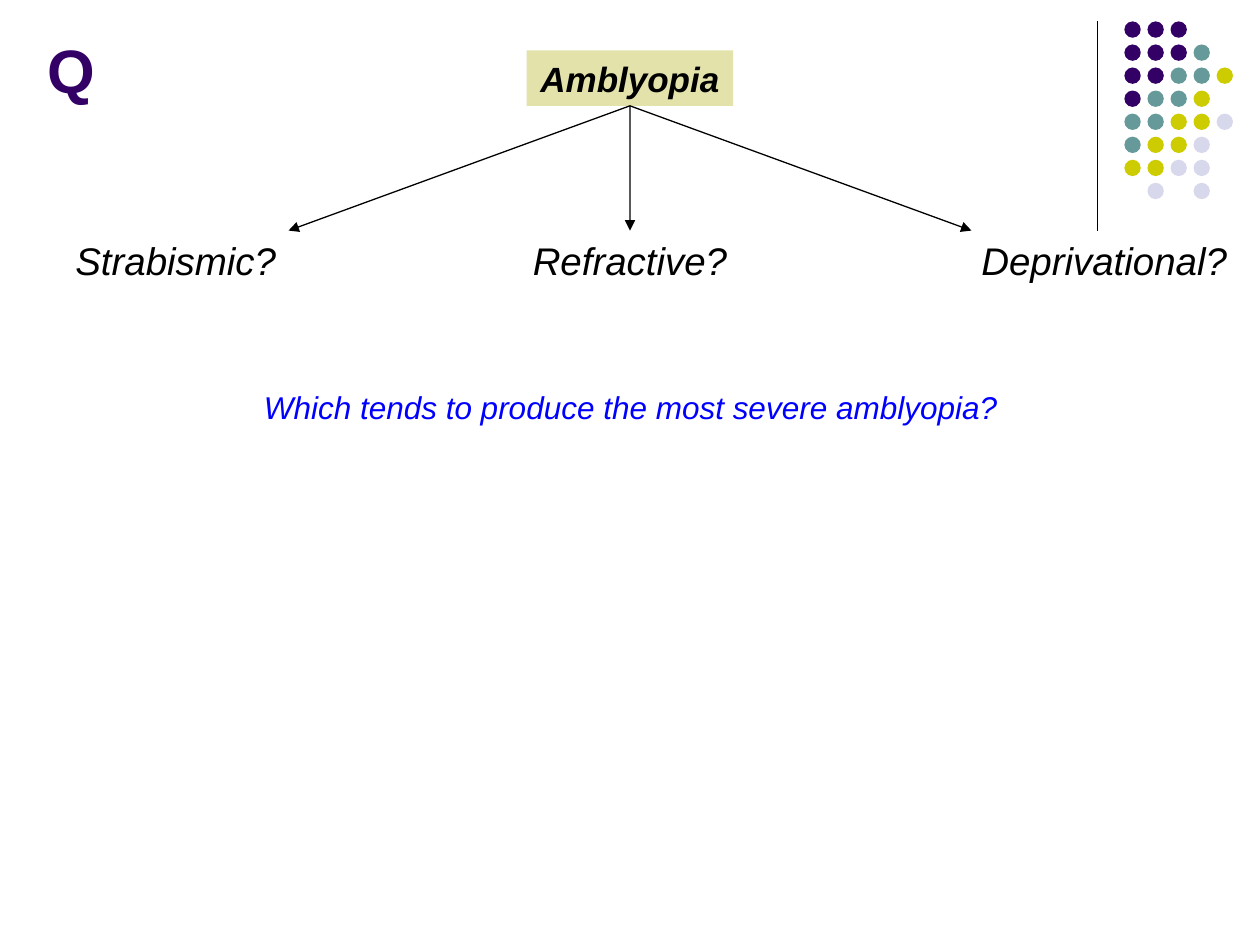
from dataclasses import dataclass

from lxml.etree import SubElement
from pptx import Presentation
from pptx.dml.color import RGBColor
from pptx.enum.shapes import MSO_CONNECTOR, MSO_SHAPE
from pptx.enum.text import MSO_ANCHOR, PP_ALIGN
from pptx.oxml.ns import qn
from pptx.util import Inches, Pt


@dataclass(frozen=True)
class Theme:
    font: str = "Arial"
    ink: str = "000000"
    purple: str = "330066"
    teal: str = "669999"
    lime: str = "CCCC00"
    lavender: str = "D8D8EC"
    topic_fill: str = "E2E2AA"
    question: str = "0000FF"
    title_size: int = 35
    topic_size: int = 20
    branch_size: int = 22
    question_size: int = 18
    line_width: float = 0.75


THEME = Theme()
DOT_COLORS = {"P": THEME.purple, "T": THEME.teal, "L": THEME.lime, "V": THEME.lavender}
DOT_ROWS = ["PPP", "PPPT", "PPTTL", "PTTL", "TTLLV", "TLLV", "LLVV", " V V"]


def place(shape, box):
    shape.left, shape.top, shape.width, shape.height = (Inches(length) for length in box)


def fill_shape(shape, color):
    shape.shadow.inherit = False
    shape.fill.solid()
    shape.fill.fore_color.rgb = RGBColor.from_string(color)
    shape.line.fill.background()


def write(shape, text, size, color, alignment, bold=False, italic=False, wrap=False):
    frame = shape.text_frame
    frame.word_wrap = wrap
    frame.text = text
    paragraph = frame.paragraphs[0]
    paragraph.alignment = alignment
    font = paragraph.font
    font.name = THEME.font
    font.size = Pt(size)
    font.bold = bold
    font.italic = italic
    font.color.rgb = RGBColor.from_string(color)


def add_label(slide, box, text, size, color, alignment, wrap=False):
    label = slide.shapes.add_textbox(*(Inches(length) for length in box))
    write(label, text, size, color, alignment, italic=True, wrap=wrap)
    return label


def add_line(slide, start, end, arrow=False):
    points = [Inches(length) for length in (*start, *end)]
    line = slide.shapes.add_connector(MSO_CONNECTOR.STRAIGHT, *points)
    line.line.width = Pt(THEME.line_width)
    line.line.color.rgb = RGBColor.from_string(THEME.ink)
    if arrow:
        SubElement(line.line._get_or_add_ln(), qn("a:tailEnd"), type="triangle")
    SubElement(line._element.spPr, qn("a:effectLst"))
    return line


def add_ornament(slide, box):
    left, top, width, height = box
    add_line(slide, (left, top), (left, top + height))
    first_column = left + 0.2 * width
    pitch = 0.183
    diameter = 0.13
    for row, pattern in enumerate(DOT_ROWS):
        for column, key in enumerate(pattern):
            if key in DOT_COLORS:
                dot = slide.shapes.add_shape(MSO_SHAPE.OVAL, 0, 0, 0, 0)
                place(dot, (first_column + column * pitch, top + row * pitch, diameter, diameter))
                fill_shape(dot, DOT_COLORS[key])


def add_title(slide, box):
    title = slide.shapes.title
    place(title, box)
    write(title, "Q", THEME.title_size, THEME.purple, PP_ALIGN.LEFT, bold=True, wrap=True)
    title.text_frame.vertical_anchor = MSO_ANCHOR.BOTTOM


def add_tree(slide, box):
    left, top, width, height = box
    center = left + width / 2
    topic_width, topic_height = 1.64, 0.44
    branch_height = 0.47
    branch_top = top + height - branch_height
    reach = 2.71

    topic = slide.shapes.add_shape(MSO_SHAPE.RECTANGLE, 0, 0, 0, 0)
    place(topic, (center - topic_width / 2, top, topic_width, topic_height))
    fill_shape(topic, THEME.topic_fill)
    write(topic, "Amblyopia", THEME.topic_size, THEME.ink, PP_ALIGN.CENTER, bold=True, italic=True)

    branches = [
        ("Strabismic?", left, 1.81, PP_ALIGN.RIGHT, -reach),
        ("Refractive?", center - 0.88, 1.76, PP_ALIGN.CENTER, 0),
        ("Deprivational?", center + reach - 0.02, 2.18, PP_ALIGN.LEFT, reach),
    ]
    for text, label_left, label_width, alignment, offset in branches:
        label_box = (label_left, branch_top, label_width, branch_height)
        label = add_label(slide, label_box, text, THEME.branch_size, THEME.ink, alignment)
        start, end = (center, top + topic_height), (center + offset, branch_top)
        arrow = add_line(slide, start, end, arrow=True)
        arrow.begin_connect(topic, 2)
        if offset == 0:
            arrow.end_connect(label, 0)


def add_question(slide, box):
    text = "Which tends to produce the most severe amblyopia?"
    add_label(slide, box, text, THEME.question_size, THEME.question, PP_ALIGN.CENTER, wrap=True)


def main():
    presentation = Presentation()
    presentation.slide_width, presentation.slide_height = Inches(10), Inches(7.5)
    slide = presentation.slides.add_slide(presentation.slide_layouts[5])
    add_ornament(slide, (8.71, 0.17, 1.07, 1.66))
    add_tree(slide, (0.48, 0.4, 9.04, 1.9))
    add_title(slide, (0.28, 0.19, 1.18, 0.7))
    add_question(slide, (1.54, 3.03, 6.93, 0.4))
    presentation.save("out.pptx")


if __name__ == "__main__":
    main()
